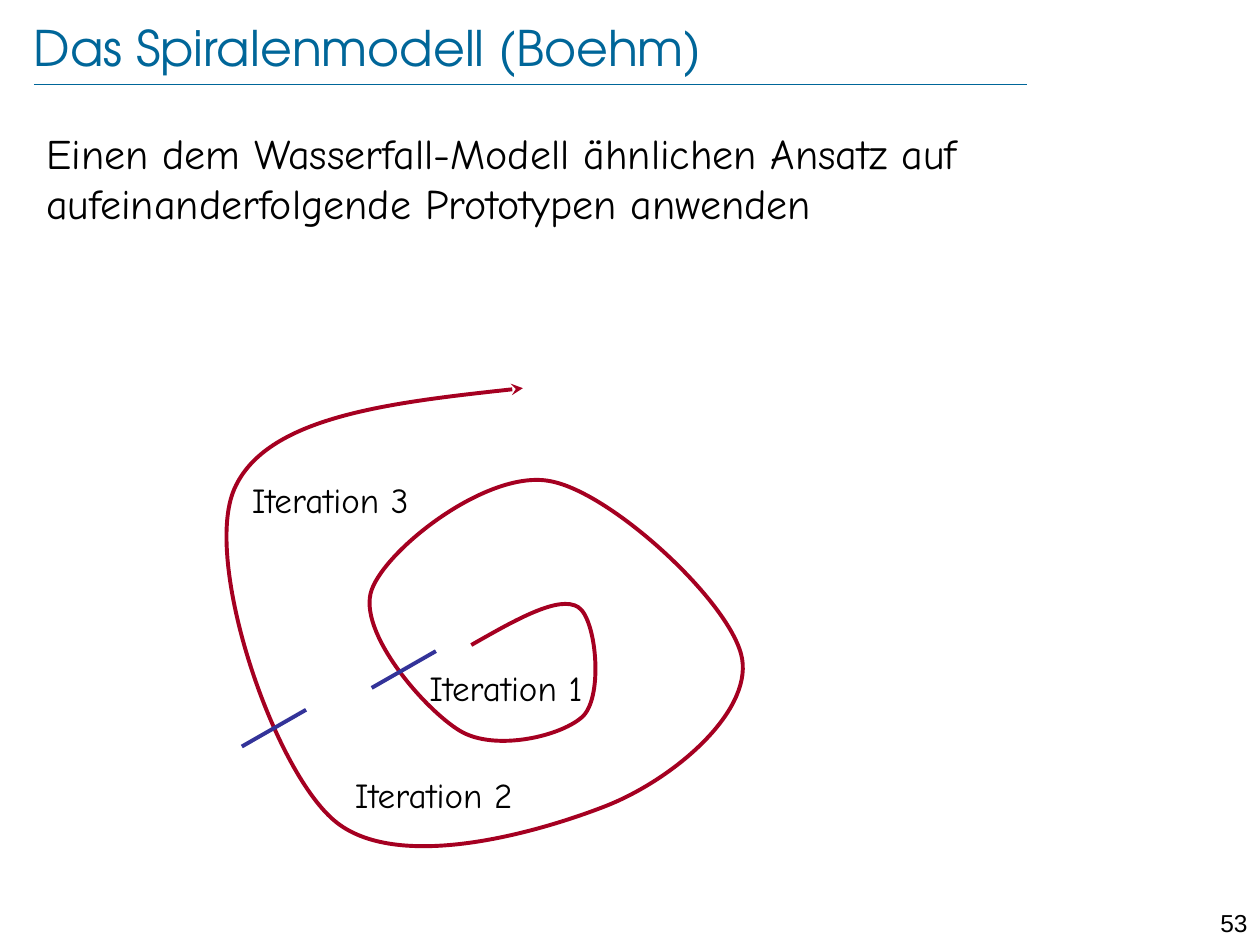
from pptx import Presentation
from pptx.dml.color import RGBColor
from pptx.enum.shapes import MSO_CONNECTOR
from pptx.enum.text import MSO_ANCHOR, MSO_AUTO_SIZE, PP_ALIGN
from pptx.oxml.ns import qn
from pptx.util import Pt
from lxml.etree import SubElement

TITLE_BLUE = "006699"
SPIRAL_RED = "A50021"
MARK_BLUE = "333399"
BLACK = "000000"
HAND_FONT = "Comic Neue"

SPIRAL_START = (269.3, 368.6)
SPIRAL_CURVES = [
    [(294.5, 354.2), (319.7, 339.8), (330.5, 347)],
    [(340.6, 353.5), (344.9, 396.7), (333.4, 409)],
    [(321.8, 420.5), (283, 429.8), (262.8, 417.6)],
    [(242.6, 405.4), (203.8, 360.7), (212.4, 337)],
    [(221, 313.2), (279.4, 267.8), (314.6, 275)],
    [(349.9, 281.5), (419, 345.6), (424.1, 376.6)],
    [(429.1, 407.5), (384.5, 445.7), (345.6, 460.8)],
    [(306.7, 475.9), (226.1, 499), (190.8, 468.7)],
    [(155.5, 438.5), (115.9, 320.4), (133.9, 279.4)],
    [(151.9, 238.3), (225.4, 229.7), (298.8, 221.8)],
]
ITERATION_LABELS = [
    ("Iteration 1", 238.3, 377.3),
    ("Iteration 2", 195.8, 438.5),
    ("Iteration 3", 136.8, 270),
]
ITERATION_MARKS = [(212.4, 393.1), (138.2, 426.6)]


def color(value):
    return RGBColor.from_string(value)


def write_text(shape, text, *, size, font=HAND_FONT, fill=BLACK,
               align=PP_ALIGN.LEFT, anchor=MSO_ANCHOR.TOP, inset=None):
    frame = shape.text_frame
    frame.word_wrap = True
    frame.auto_size = MSO_AUTO_SIZE.NONE
    frame.vertical_anchor = anchor
    if inset is not None:
        frame.margin_left = frame.margin_right = Pt(inset)
        frame.margin_top = frame.margin_bottom = Pt(inset)
    paragraph = frame.paragraphs[0]
    paragraph.alignment = align
    run = paragraph.add_run()
    run.text = text
    run.font.size = Pt(size)
    run.font.name = font
    run.font.color.rgb = color(fill)


def add_title(slide, text):
    title = slide.shapes.title
    title.left, title.top = Pt(19.4), Pt(9.4)
    title.width, title.height = Pt(625.7), Pt(34.6)
    write_text(title, text, size=28, font="TeX Gyre Adventor",
               fill=TITLE_BLUE, anchor=MSO_ANCHOR.MIDDLE, inset=0)


def add_text(slide, text, left, top, width, height, **text_format):
    box = slide.shapes.add_textbox(Pt(left), Pt(top), Pt(width), Pt(height))
    write_text(box, text, **text_format)


def add_line(slide, start, end, fill, width):
    line = slide.shapes.add_connector(
        MSO_CONNECTOR.STRAIGHT, *(Pt(value) for value in (*start, *end)))
    line.line.color.rgb = color(fill)
    line.line.width = Pt(width)
    SubElement(line._element.spPr, qn("a:effectLst"))


def add_curve(slide, start, curves, fill, width):
    builder = slide.shapes.build_freeform(Pt(start[0]), Pt(start[1]))
    vertices = [(Pt(x), Pt(y)) for curve in curves for x, y in curve]
    builder.add_line_segments(vertices, close=False)
    shape = builder.convert_to_shape()
    outline = next(shape._element.iter(qn("a:path")))
    segments = outline.findall(qn("a:lnTo"))
    for index in range(0, len(segments), 3):
        bezier = SubElement(outline, qn("a:cubicBezTo"))
        for segment in segments[index:index + 3]:
            bezier.append(segment[0])
            outline.remove(segment)
    shape.shadow.inherit = False
    shape.fill.background()
    shape.line.color.rgb = color(fill)
    shape.line.width = Pt(width)
    SubElement(shape.line._get_or_add_ln(), qn("a:tailEnd"), type="stealth")


def main():
    presentation = Presentation()
    presentation.slide_width, presentation.slide_height = Pt(720), Pt(540)
    slide = presentation.slides.add_slide(presentation.slide_layouts[5])

    add_line(slide, (19.4, 48.2), (586.8, 48.2), TITLE_BLUE, 0.25)
    add_text(slide, "53", 680.4, 515.5, 39.6, 17.3, size=14, font="Arial",
             align=PP_ALIGN.RIGHT)
    add_title(slide, "Das Spiralenmodell (Boehm)")
    add_text(slide, "Einen dem Wasserfall-Modell ähnlichen Ansatz auf "
             "aufeinanderfolgende Prototypen anwenden",
             19.4, 69.1, 676.8, 444.2, size=24)

    add_curve(slide, SPIRAL_START, SPIRAL_CURVES, SPIRAL_RED, 2.25)
    for left, bottom in ITERATION_MARKS:
        add_line(slide, (left, bottom), (left + 36.7, bottom - 21),
                 MARK_BLUE, 2.25)
    for text, left, top in ITERATION_LABELS:
        add_text(slide, text, left, top, 119, 31, size=20)

    presentation.save("out.pptx")


if __name__ == "__main__":
    main()
